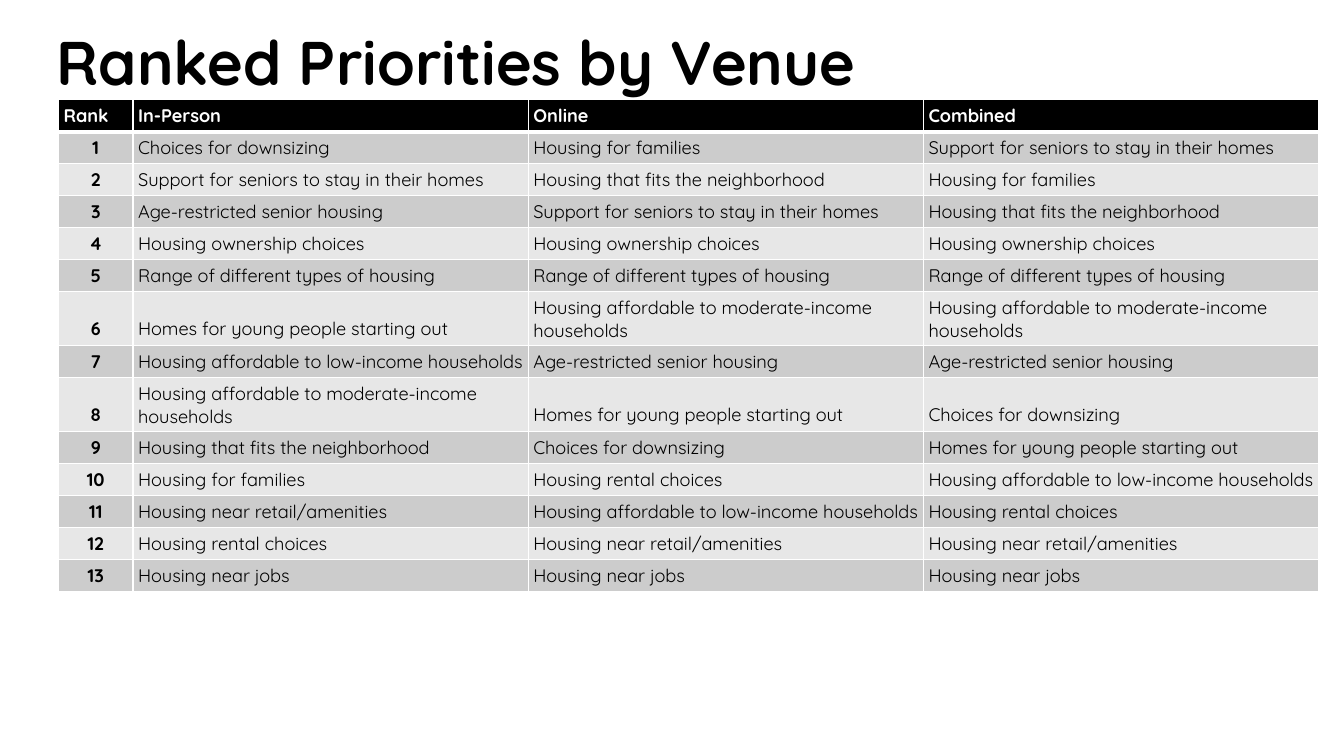
from typing import NamedTuple

from lxml.etree import SubElement as Sub
from pptx import Presentation
from pptx.dml.color import RGBColor as Rgb
from pptx.enum.text import MSO_ANCHOR as Anchor, PP_ALIGN as Align
from pptx.oxml.ns import qn
from pptx.util import Inches, Pt

FONT = "Quicksand"
COLORS = {"ink": "000000", "paper": "FFFFFF", "odd": "CCCCCC", "even": "E7E7E7"}
WIDTHS = (0.74, 3.92, 3.92, 3.92)
HEADS = ("Rank", "In-Person", "Online", "Combined")
THIN, THICK = 1, 3


class Places(NamedTuple):
    person: str
    online: str
    both: str


class Style(NamedTuple):
    size: float
    color: str
    bold: bool


RANKS = [
    Places("Choices for downsizing", "Housing for families",
           "Support for seniors to stay in their homes"),
    Places("Support for seniors to stay in their homes",
           "Housing that fits the neighborhood", "Housing for families"),
    Places("Age-restricted senior housing",
           "Support for seniors to stay in their homes",
           "Housing that fits the neighborhood"),
    Places(*["Housing ownership choices"] * 3),
    Places(*["Range of different types of housing"] * 3),
    Places("Homes for young people starting out",
           "Housing affordable to moderate-income households",
           "Housing affordable to moderate-income households"),
    Places("Housing affordable to low-income households",
           "Age-restricted senior housing", "Age-restricted senior housing"),
    Places("Housing affordable to moderate-income households",
           "Homes for young people starting out", "Choices for downsizing"),
    Places("Housing that fits the neighborhood", "Choices for downsizing",
           "Homes for young people starting out"),
    Places("Housing for families", "Housing rental choices",
           "Housing affordable to low-income households"),
    Places("Housing near retail/amenities",
           "Housing affordable to low-income households",
           "Housing rental choices"),
    Places("Housing rental choices", "Housing near retail/amenities",
           "Housing near retail/amenities"),
    Places(*["Housing near jobs"] * 3),
]


def write(para, text: str, style: Style) -> None:
    run = para.add_run()
    run.text = text
    font = run.font
    font.name, font.size, font.bold = FONT, Pt(style.size), style.bold
    font.color.rgb = Rgb.from_string(COLORS[style.color])


def edge(cell, top: int, bottom: int) -> None:
    props = cell._tc.get_or_add_tcPr()
    for side, width in (("L", THIN), ("R", THIN), ("T", top), ("B", bottom)):
        line = Sub(props, qn(f"a:ln{side}"), w=str(Pt(width)))
        fill = Sub(line, qn("a:solidFill"))
        Sub(fill, qn("a:srgbClr"), val=COLORS["paper"])


def draw_cell(cell, text: str, row: int, col: int) -> None:
    head = row == 0
    edge(cell, THICK if row == 1 else THIN, THICK if head else THIN)
    shade = "ink" if head else "odd" if row % 2 else "even"
    cell.fill.solid()
    cell.fill.fore_color.rgb = Rgb.from_string(COLORS[shade])
    cell.vertical_anchor = Anchor.BOTTOM
    cell.margin_left = cell.margin_right = Inches(0.05)
    cell.margin_top = cell.margin_bottom = Inches(0.05)
    para = cell.text_frame.paragraphs[0]
    para.alignment = Align.CENTER if col == 0 and not head else Align.LEFT
    write(para, text, Style(13, "paper" if head else "ink", head or col == 0))


def draw_title(slide) -> None:
    box = slide.shapes.add_textbox(Inches(0.46), Inches(-0.08),
                                   Inches(11.5), Inches(1.45))
    frame = box.text_frame
    frame.word_wrap = True
    frame.vertical_anchor = Anchor.MIDDLE
    para = frame.paragraphs[0]
    para.line_spacing = 0.9
    write(para, "Ranked Priorities by Venue", Style(44, "ink", True))


def draw_table(slide) -> None:
    rows = [HEADS] + [(str(n), *places) for n, places in enumerate(RANKS, 1)]
    shape = slide.shapes.add_table(len(rows), len(HEADS), Inches(0.58),
                                   Inches(0.99), Inches(12.48), Inches(5.52))
    table = shape.table
    for col, width in zip(table.columns, WIDTHS):
        col.width = Inches(width)
    # Rows grow from this least height to fit their text
    for line in table.rows:
        line.height = Inches(0.21)
    shape.width, shape.height = Inches(12.48), Inches(5.52)
    for r, texts in enumerate(rows):
        for c, text in enumerate(texts):
            draw_cell(table.cell(r, c), text, r, c)


def main() -> None:
    deck = Presentation()
    deck.slide_width, deck.slide_height = Inches(13.33), Inches(7.5)
    slide = deck.slides.add_slide(deck.slide_layouts[6])
    draw_title(slide)
    draw_table(slide)
    deck.save("out.pptx")


if __name__ == "__main__":
    main()
